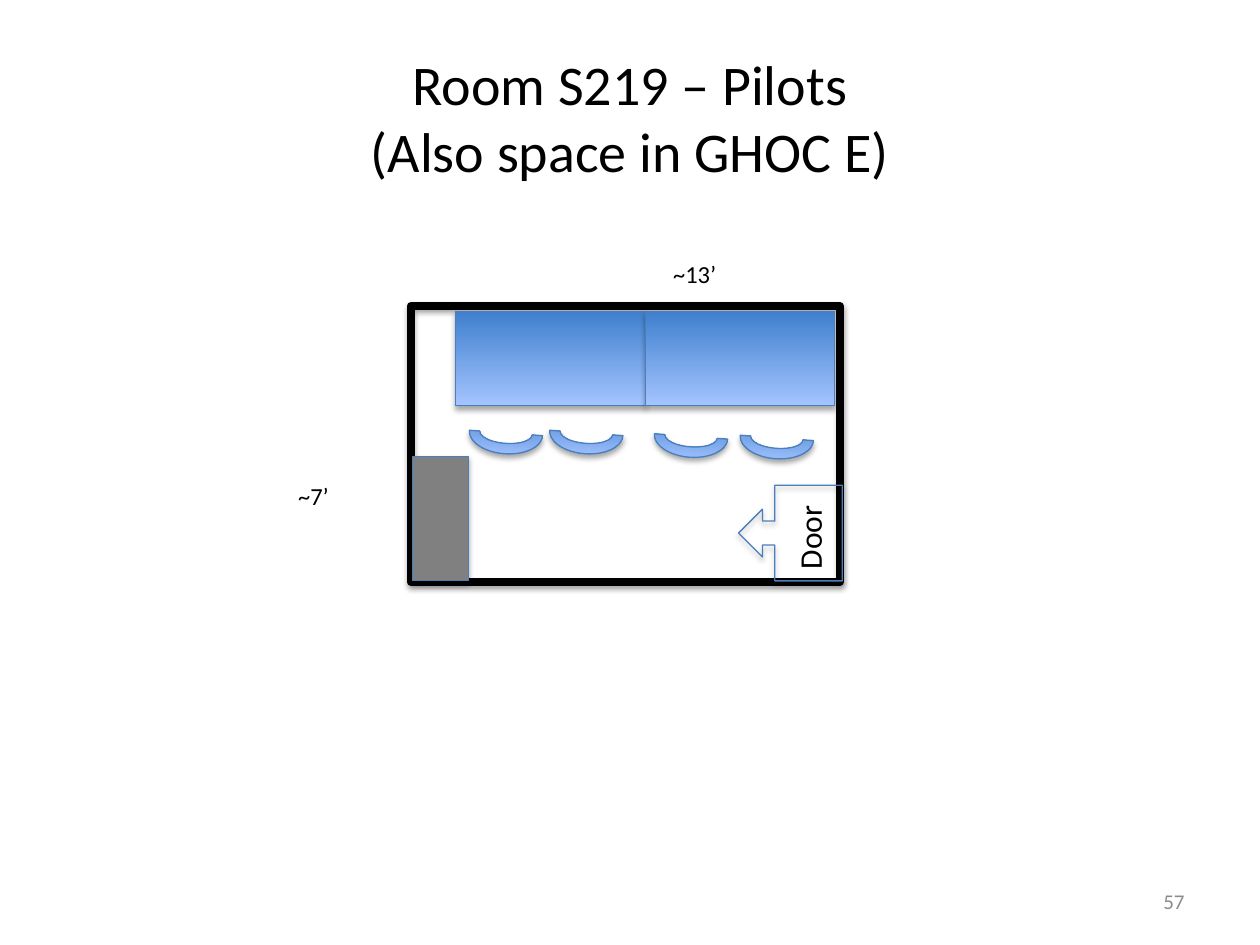
from pptx import Presentation
from pptx.dml.color import RGBColor
from pptx.enum.shapes import MSO_SHAPE
from pptx.enum.text import MSO_ANCHOR, PP_ALIGN
from pptx.oxml import parse_xml
from pptx.oxml.ns import nsdecls, qn
from pptx.util import Cm, Pt

RECTANGLE, ARC = MSO_SHAPE.RECTANGLE, MSO_SHAPE.BLOCK_ARC
CALLOUT = MSO_SHAPE.UP_ARROW_CALLOUT
MIDDLE, TOP = MSO_ANCHOR.MIDDLE, MSO_ANCHOR.TOP
LEFT, CENTER, RIGHT = PP_ALIGN.LEFT, PP_ALIGN.CENTER, PP_ALIGN.RIGHT

COLORS = {
    "black": "000000",
    "outline": "4B7EBC",
    "cabinet": "808080",
    "dark blue": "3F80CE",
    "light blue": "A4C4FF",
    "number": "8C8C8C",
}
FONT = "Calibri"
SHADOW = (
    f'<a:effectLst {nsdecls("a")}>'
    '<a:outerShdw blurRad="40000" dist="23000" dir="5400000" rotWithShape="0">'
    '<a:srgbClr val="{color}"><a:alpha val="35000"/></a:srgbClr>'
    "</a:outerShdw></a:effectLst>"
)


def color(name):
    return RGBColor.from_string(COLORS[name])


def add_item(kind, box, fill=None, line="outline", width=0.75, rotation=0, flips=()):
    """Add a floor plan shape with a soft shadow; fill is a colour name, "gradient" or None."""
    shape = slide.shapes.add_shape(kind, *map(Cm, box))
    shape.rotation = rotation
    for flip in flips:
        shape._element.spPr.find(qn("a:xfrm")).set(flip, "1")
    if fill == "gradient":
        shape.fill.gradient()
        shape.fill.gradient_angle = 90
        for stop, name in zip(shape.fill.gradient_stops, ("dark blue", "light blue")):
            stop.color.rgb = color(name)
    elif fill:
        shape.fill.solid()
        shape.fill.fore_color.rgb = color(fill)
    else:
        shape.fill.background()
    shape.line.color.rgb = color(line)
    shape.line.width = Pt(width)
    shape.shadow.inherit = False
    effects = shape._element.spPr.find(qn("a:effectLst"))
    effects.getparent().replace(
        effects, parse_xml(SHADOW.format(color=COLORS["black"])))


presentation = Presentation()
presentation.slide_width, presentation.slide_height = Cm(25.4), Cm(19.05)
slide = presentation.slides.add_slide(presentation.slide_layouts[5])

title = slide.shapes.title
title.left, title.top, title.width, title.height = map(Cm, (1.27, 0.76, 22.86, 3.18))
title.text_frame.text = "Room S219 – Pilots\v(Also space in GHOC E)"
title.text_frame.vertical_anchor = MIDDLE
paragraph = title.text_frame.paragraphs[0]
paragraph.alignment = CENTER
paragraph.font.name, paragraph.font.size = FONT, Pt(32)
paragraph.font.color.rgb = color("black")

# Room walls and furniture
add_item(RECTANGLE, (8.28, 6.17, 8.65, 5.56), line="black", width=4.5)
add_item(RECTANGLE, (8.31, 9.2, 1.13, 2.51), fill="cabinet")
desk_width = 3.82
for column in range(2):
    add_item(RECTANGLE, (9.19 + column * desk_width, 6.28, desk_width, 1.9),
             fill="gradient", rotation=180, flips=("flipH",))
for left, top in ((14.92, 8.41), (13.19, 8.38), (11.08, 8.31), (9.46, 8.31)):
    add_item(ARC, (left, top, 1.48, 0.84), fill="gradient",
             rotation=4.2, flips=("flipH", "flipV"))
add_item(CALLOUT, (14.97, 9.7, 1.93, 2.09), rotation=270)

# Dimensions, door label and slide number
for text, box, size, name, alignment, anchor, rotation in (
    ("~7’", (5.76, 9.58, 1.68, 0.86), 14, "black", LEFT, TOP, 0),
    ("~13’", (13.32, 5.1, 2.64, 0.86), 14, "black", LEFT, TOP, 0),
    ("Door", (15.44, 10.31, 1.78, 1.04), 18, "black", LEFT, TOP, 270),
    ("57", (18.21, 17.65, 5.92, 1.02), 12, "number", RIGHT, MIDDLE, 0),
):
    label = slide.shapes.add_textbox(*map(Cm, box))
    label.rotation = rotation
    frame = label.text_frame
    frame.word_wrap = True
    if alignment == LEFT:
        frame.margin_right = 0
    frame.vertical_anchor = anchor
    frame.text = text
    paragraph = frame.paragraphs[0]
    paragraph.alignment = alignment
    paragraph.font.name, paragraph.font.size = FONT, Pt(size)
    paragraph.font.color.rgb = color(name)

presentation.save("out.pptx")
